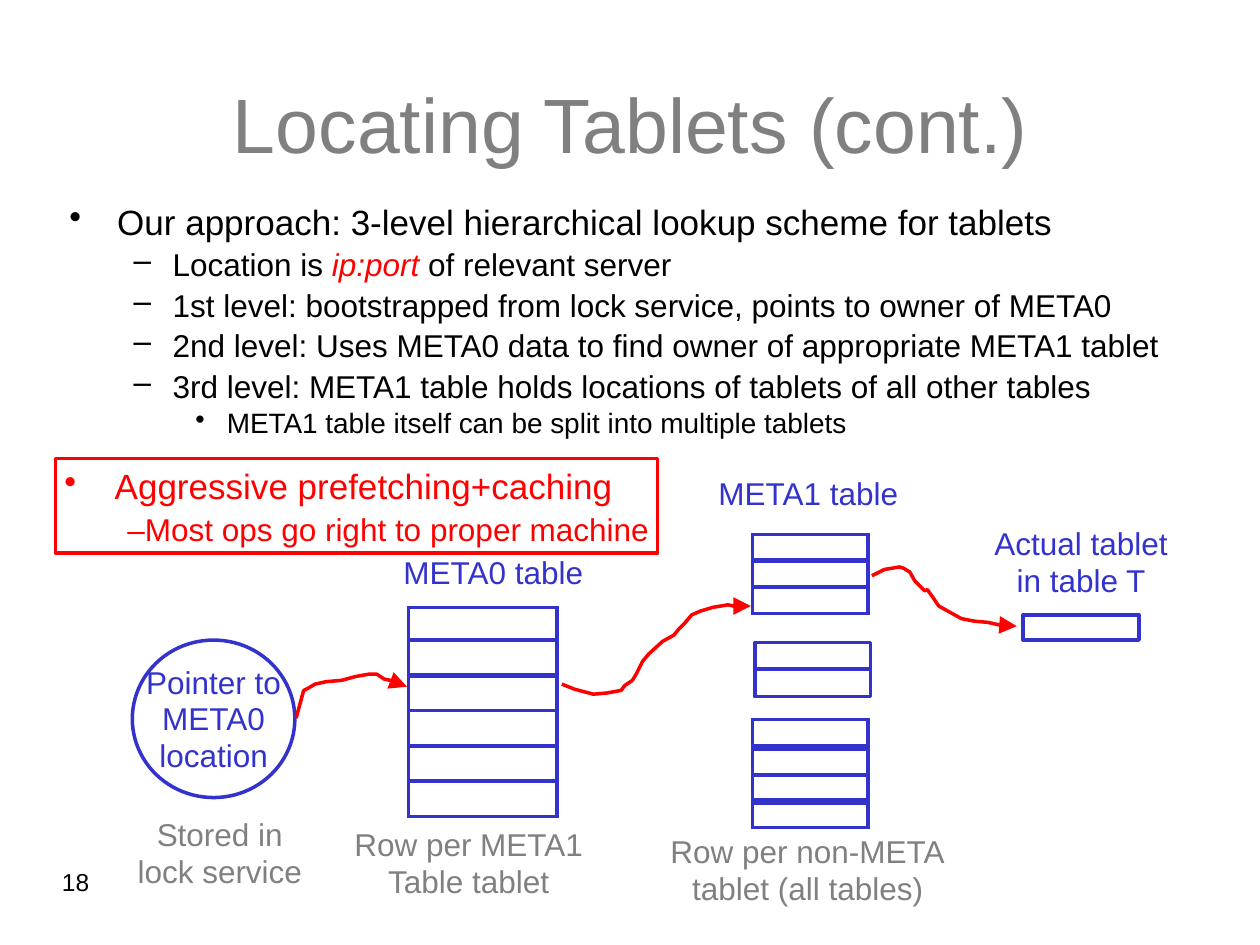
from lxml.etree import SubElement
from pptx import Presentation
from pptx.dml.color import RGBColor
from pptx.enum.shapes import MSO_SHAPE
from pptx.enum.text import MSO_ANCHOR, PP_ALIGN
from pptx.oxml.ns import qn
from pptx.util import Inches, Pt

COLORS = {"black": "000000", "gray": "808080", "blue": "3333CC", "red": "FF0000"}
FONT = "Arial"

# level: left margin, hanging indent, bullet, size, space before
LEVELS = [
    (0.39, 0.38, "•", 20, 0),
    (0.83, 0.31, "–", 18, 1.6),
    (1.26, 0.25, "•", 16, 0.7),
]
OUTLINE = [
    (0, ["Our approach: 3-level hierarchical lookup scheme for tablets"]),
    (1, ["Location is ", "ip:port", " of relevant server"]),
    (1, ["1st level: bootstrapped from lock service, points to owner of META0"]),
    (1, ["2nd level: Uses META0 data to find owner of appropriate META1 tablet"]),
    (1, ["3rd level: META1 table holds locations of tablets of all other tables"]),
    (2, ["META1 table itself can be split into multiple tablets"]),
]
EMPHASIS = "ip:port"
CALLOUT = [
    ("Aggressive prefetching+caching", (0.4, 0.4, "•", 20, 0)),
    ("–Most ops go right to proper machine", (0.5, 0, None, 18, 1.6)),
]
# lines, color, (left, top, width, height)
LABELS = [
    (["META0 table"], "blue", (3.19, 4.37, 1.45, 0.33)),
    (["META1 table"], "blue", (5.69, 3.74, 1.45, 0.33)),
    (["Actual tablet", "in table T"], "blue", (7.88, 4.14, 1.4, 0.62)),
    (["Stored in", "lock service"], "gray", (1.08, 6.45, 1.33, 0.62)),
    (["Row per META1", "Table tablet"], "gray", (2.8, 6.53, 1.84, 0.62)),
    (["Row per non-META", "tablet (all tables)"], "gray", (5.31, 6.58, 2.2, 0.62)),
]
# left, top, width, row heights, thicker rules by row boundary
TABLES = [
    (3.24, 4.82, 1.18, [0.26] + [0.28] * 5, {2: 3}),
    (5.97, 4.24, 0.92, [0.21] * 3, {1: 3}),
    (5.97, 5.71, 0.92, [0.22, 0.22, 0.21, 0.21], {1: 4.5, 3: 4.5}),
]
TABLET_BOXES = [(5.99, 5.1, 0.92, 0.21), (5.99, 5.31, 0.92, 0.22), (8.12, 4.88, 0.92, 0.2)]
ARROWS = [
    [(2.35, 5.7), (2.38, 5.59), (2.41, 5.48), (2.45, 5.46), (2.5, 5.43), (2.59, 5.41),
     (2.71, 5.4), (2.82, 5.37), (2.93, 5.35), (2.99, 5.35), (3.05, 5.39), (3.1, 5.4),
     (3.23, 5.45)],
    [(4.46, 5.43), (4.56, 5.47), (4.71, 5.51), (4.82, 5.5), (4.93, 5.48), (4.96, 5.44),
     (5.02, 5.4), (5.05, 5.35), (5.1, 5.25), (5.15, 5.19), (5.26, 5.09), (5.35, 5.04),
     (5.39, 4.99), (5.44, 4.94), (5.49, 4.88), (5.56, 4.85), (5.66, 4.82), (5.78, 4.8),
     (5.82, 4.81), (5.96, 4.81)],
    [(6.92, 4.57), (7.02, 4.52), (7.14, 4.5), (7.17, 4.51), (7.22, 4.54), (7.26, 4.61),
     (7.31, 4.66), (7.34, 4.69), (7.36, 4.68), (7.41, 4.75), (7.45, 4.81), (7.54, 4.86),
     (7.63, 4.91), (7.73, 4.93), (7.84, 4.94), (7.93, 4.96), (8.07, 4.97)],
]


def rgb(color):
    return RGBColor.from_string(COLORS[color])


def set_font(paragraph, size, color):
    paragraph.font.name = FONT
    paragraph.font.size = Pt(size)
    paragraph.font.color.rgb = rgb(color)


def set_frame(shape, left=0, top=0):
    frame = shape.text_frame
    frame.word_wrap = True
    frame.vertical_anchor = MSO_ANCHOR.TOP
    frame.margin_left, frame.margin_top = Inches(left), Inches(top)
    frame.margin_right = frame.margin_bottom = 0
    return frame


def add_text_box(slide, box, top=0.03):
    return set_frame(slide.shapes.add_textbox(*map(Inches, box)), top=top)


def next_paragraph(frame, index):
    return frame.add_paragraph() if index else frame.paragraphs[0]


def fill_centered(frame, lines, size, color, spacing=None):
    for index, line in enumerate(lines):
        paragraph = next_paragraph(frame, index)
        paragraph.text = line
        paragraph.alignment = PP_ALIGN.CENTER
        if spacing:
            paragraph.line_spacing = Pt(spacing)
        set_font(paragraph, size, color)


def fill_outline(frame, items, color):
    for index, (runs, (margin, hang, bullet, size, before)) in enumerate(items):
        paragraph = next_paragraph(frame, index)
        paragraph.alignment = PP_ALIGN.LEFT
        properties = paragraph._p.get_or_add_pPr()
        properties.set("marL", str(Inches(margin)))
        properties.set("indent", str(-Inches(hang)))
        if bullet:
            SubElement(properties, qn("a:buChar"), char=bullet)
        paragraph.space_before = Pt(before)
        set_font(paragraph, size, color)
        for text in runs:
            run = paragraph.add_run()
            run.text = text
            if text == EMPHASIS:
                run.font.italic = True
                run.font.color.rgb = rgb("red")


def set_outline(shape, color):
    shape.shadow.inherit = False
    shape.fill.background()
    shape.line.color.rgb = rgb(color)
    shape.line.width = Pt(2)


def add_outlined(slide, kind, box, color):
    shape = slide.shapes.add_shape(kind, *map(Inches, box))
    set_outline(shape, color)
    return shape


def add_border(cell, side, width):
    properties = cell._tc.get_or_add_tcPr()
    line = SubElement(properties, qn(f"a:ln{side}"), w=str(Pt(width)))
    fill = SubElement(line, qn("a:solidFill"))
    SubElement(fill, qn("a:srgbClr"), val=COLORS["blue"])


def add_row_table(slide, left, top, width, heights, thick):
    frame = slide.shapes.add_table(
        len(heights), 1, *map(Inches, (left, top, width, sum(heights))))
    table = frame.table
    table.first_row = table.horz_banding = False
    table.columns[0].width = Inches(width)
    for index, height in enumerate(heights):
        table.rows[index].height = Inches(height)
        cell = table.cell(index, 0)
        cell.margin_left = cell.margin_right = cell.margin_top = cell.margin_bottom = 0
        SubElement(cell.text_frame.paragraphs[0]._p, qn("a:endParaRPr"), sz="800")
        for side, boundary in (("L", None), ("R", None), ("T", index), ("B", index + 1)):
            add_border(cell, side, thick.get(boundary, 2.25))
        cell.fill.background()


def add_curved_arrow(slide, points):
    start, *rest = [(Inches(x), Inches(y)) for x, y in points]
    builder = slide.shapes.build_freeform(*start)
    builder.add_line_segments(rest, close=False)
    arrow = builder.convert_to_shape()
    set_outline(arrow, "red")
    SubElement(arrow.line._get_or_add_ln(), qn("a:tailEnd"), type="triangle", w="lg", len="lg")


def main():
    presentation = Presentation()
    presentation.slide_width, presentation.slide_height = Inches(10), Inches(7.5)
    slide = presentation.slides.add_slide(presentation.slide_layouts[6])

    title = add_text_box(slide, (0.82, 0.58, 8.37, 0.75))
    fill_centered(title, ["Locating Tablets (cont.)"], 44, "gray")
    body = add_text_box(slide, (0.54, 1.53, 9, 1.95), top=0.06)
    fill_outline(body, [(runs, LEVELS[level]) for level, runs in OUTLINE], "black")

    callout = add_outlined(slide, MSO_SHAPE.RECTANGLE, (0.44, 3.64, 4.78, 0.75), "red")
    callout_items = [([text], style) for text, style in CALLOUT]
    fill_outline(set_frame(callout, left=0.07, top=0.05), callout_items, "red")

    pointer = add_outlined(slide, MSO_SHAPE.OVAL, (1.05, 5.08, 1.29, 1.25), "blue")
    pointer_frame = set_frame(pointer)
    pointer_frame.word_wrap = False
    pointer_frame.vertical_anchor = MSO_ANCHOR.MIDDLE
    fill_centered(pointer_frame, ["Pointer to", "META0", "location"], 18, "blue", 20.8)

    for table in TABLES:
        add_row_table(slide, *table)
    for box in TABLET_BOXES:
        add_outlined(slide, MSO_SHAPE.RECTANGLE, box, "blue")
    for points in ARROWS:
        add_curved_arrow(slide, points)
    for lines, color, box in LABELS:
        fill_centered(add_text_box(slide, box), lines, 18, color, 21)

    number = add_text_box(slide, (0.48, 6.85, 0.24, 0.26))
    fill_centered(number, ["18"], 14, "black")
    presentation.save("out.pptx")


if __name__ == "__main__":
    main()
